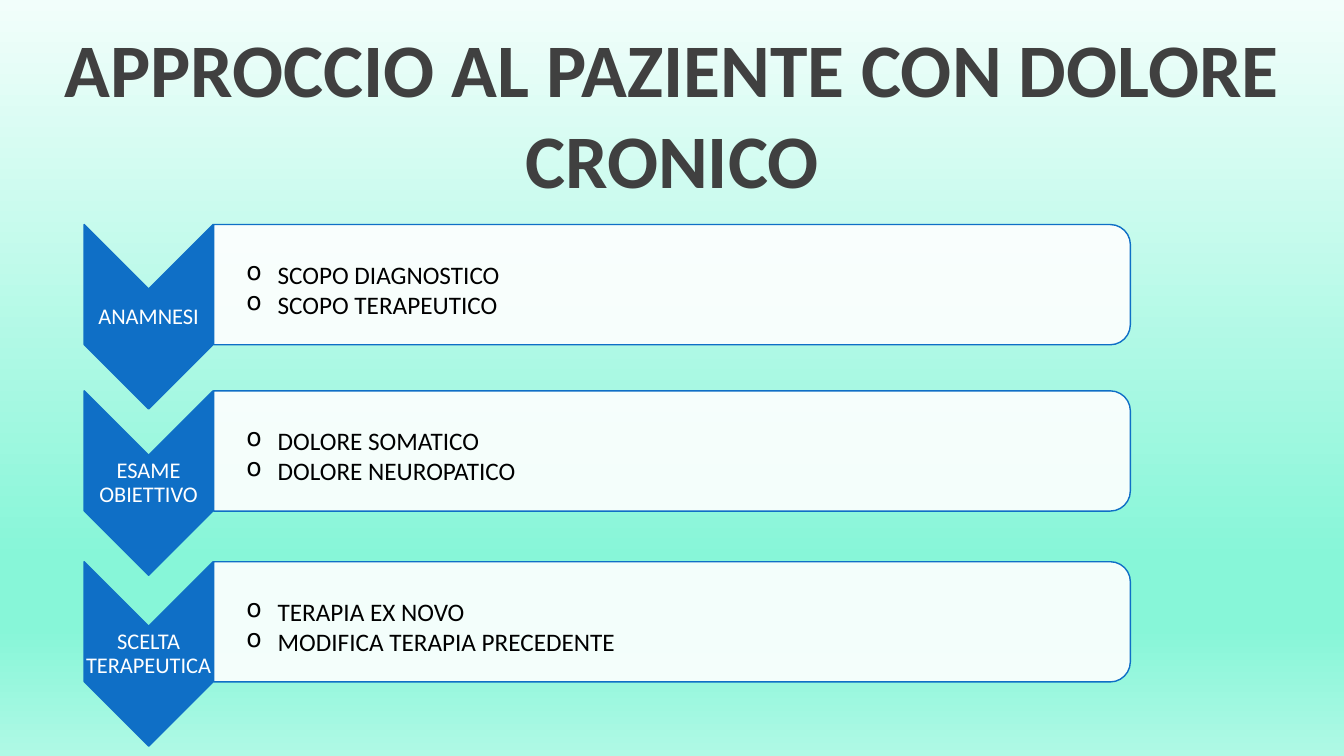
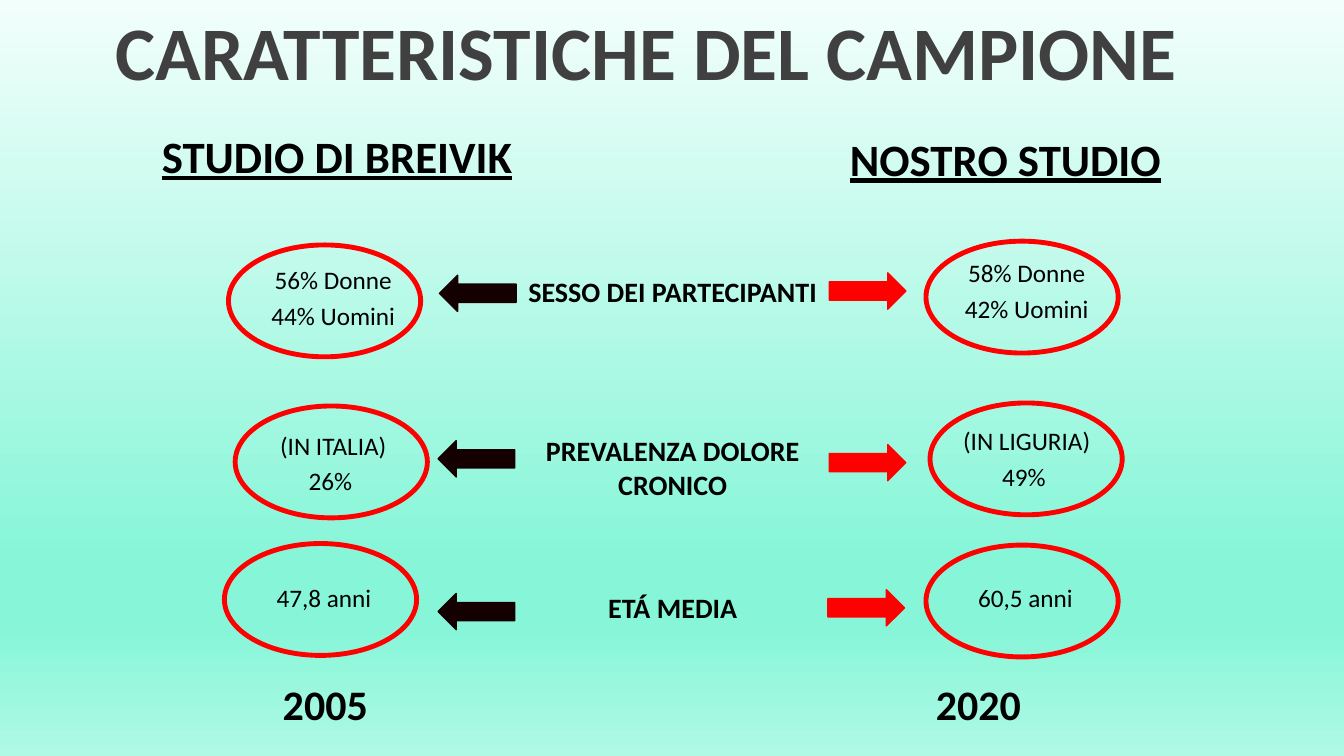
import pptx
import pptx.dml.color
import pptx.enum.shapes
import pptx.enum.text
import pptx.oxml
import pptx.oxml.ns
import pptx.util
import lxml.etree

RGBColor = pptx.dml.color.RGBColor
SHAPE = pptx.enum.shapes.MSO_SHAPE
ALIGN = pptx.enum.text.PP_ALIGN
qn = pptx.oxml.ns.qn

TITLE_GREY = RGBColor(0x40, 0x40, 0x40)
BLUE = RGBColor(0x0F, 0x6F, 0xC6)
RED = RGBColor(0xFF, 0x00, 0x00)
DARK = RGBColor(0x14, 0x00, 0x00)
BLACK = RGBColor(0x00, 0x00, 0x00)
WHITE = RGBColor(0xFF, 0xFF, 0xFF)
BACKGROUND_STOPS = [(0, "F2FEFB"), (74, "87F6D8"), (83, "87F6D8"), (100, "AFF9E5")]
FONT = "Calibri"
TITLE = {"size": 54, "color": TITLE_GREY, "bold": True, "align": ALIGN.CENTER}

deck = pptx.Presentation()
deck.slide_width = pptx.util.Inches(13.33)
deck.slide_height = pptx.util.Inches(7.5)
# All positions are percentages of the slide's width and height.
X = deck.slide_width / 100
Y = deck.slide_height / 100


def add_text(slide, lines, left, top, width, height, size,
             color=BLACK, bold=False, align=ALIGN.LEFT):
    """Add a text box with one paragraph per line and return its frame."""
    box = slide.shapes.add_textbox(round(left * X), round(top * Y),
                                   round(width * X), round(height * Y))
    frame = box.text_frame
    frame.word_wrap = True
    frame.text = "\n".join(lines)
    for para in frame.paragraphs:
        para.alignment = align
        para.font.name = FONT
        para.font.size = pptx.util.Pt(size)
        para.font.bold = bold
        para.font.color.rgb = color
    return frame


def add_shape(slide, kind, left, top, width, height, fill, line,
              line_width=1, turned=False):
    """Add a shape by its visible bounds; turned rotates it a quarter turn."""
    x, y, w, h = left * X, top * Y, width * X, height * Y
    if turned:
        x, y, w, h = x + (w - h) / 2, y + (h - w) / 2, h, w
    shape = slide.shapes.add_shape(kind, round(x), round(y), round(w), round(h))
    shape.rotation = 90 if turned else 0
    shape.shadow.inherit = False
    if fill is None:
        shape.fill.background()
    else:
        shape.fill.solid()
        shape.fill.fore_color.rgb = fill
    shape.line.color.rgb = line
    shape.line.width = pptx.util.Pt(line_width)
    return shape


# Shared background
background = deck.slide_master.background.fill
background.gradient()
background.gradient_angle = 270
stop_list = deck.slide_master.element.find(".//" + qn("a:gsLst"))
for stop in list(stop_list):
    stop_list.remove(stop)
for position, color in BACKGROUND_STOPS:
    stop = lxml.etree.SubElement(stop_list, qn("a:gs"), pos=str(position * 1000))
    lxml.etree.SubElement(stop, qn("a:srgbClr"), val=color)

blank = deck.slide_layouts[6]

# Slide 1: approach in three steps
slide = deck.slides.add_slide(blank)
add_text(slide, ["APPROCCIO AL PAZIENTE CON DOLORE CRONICO"],
         -3.2, 2.3, 106.4, 25.6, **TITLE)

STEPS = [
    (29.7, "ANAMNESI", ["SCOPO DIAGNOSTICO", "SCOPO TERAPEUTICO"]),
    (51.7, "ESAME OBIETTIVO", ["DOLORE SOMATICO", "DOLORE NEUROPATICO"]),
    (74.3, "SCELTA TERAPEUTICA", ["TERAPIA EX NOVO", "MODIFICA TERAPIA PRECEDENTE"]),
]
for top, step, points in STEPS:
    add_shape(slide, SHAPE.CHEVRON, 6.26, top, 9.6, 24.4, BLUE, BLUE, turned=True)
    label = add_text(slide, [step], 6.26, top + 8.6, 9.6, 7.3, 16, WHITE,
                     align=ALIGN.CENTER)
    label.vertical_anchor = pptx.enum.text.MSO_ANCHOR.MIDDLE
    label.margin_left = label.margin_right = pptx.util.Inches(0.01)
    label.margin_top = label.margin_bottom = pptx.util.Inches(0.01)
    label.paragraphs[0].line_spacing = 0.9

    band = add_shape(slide, SHAPE.ROUND_2_SAME_RECTANGLE, 15.9, top, 68.2, 15.9,
                     WHITE, BLUE, turned=True)
    fill_color = band.element.spPr.find(qn("a:solidFill")).find(qn("a:srgbClr"))
    lxml.etree.SubElement(fill_color, qn("a:alpha"), val="90000")

    bullets = add_text(slide, points, 17.6, top + 3.9, 44, 9.5, 18)
    indent = pptx.util.Inches(0.31)
    for para in bullets.paragraphs:
        properties = para._p.get_or_add_pPr()
        properties.set("marL", str(indent))
        properties.set("indent", str(-indent))
        bullet = pptx.oxml.parse_xml(
            '<a:buChar %s char="o"/>' % pptx.oxml.ns.nsdecls("a"))
        properties.find(qn("a:defRPr")).addprevious(bullet)

# Slide 2: the two samples compared
slide = deck.slides.add_slide(blank)
add_text(slide, ["CARATTERISTICHE DEL CAMPIONE"], 5.1, 0, 86, 13.5, **TITLE)

for heading, left, top in [("STUDIO DI BREIVIK", 11.3, 16.4),
                           ("NOSTRO STUDIO", 62.5, 16.7)]:
    frame = add_text(slide, [heading], left, top, 30, 8.5, 32, bold=True)
    frame.paragraphs[0].font.underline = True

for topic, top in [("SESSO DEI PARTECIPANTI", 35.7),
                   ("PREVALENZA DOLORE CRONICO", 56.7),
                   ("ETÁ MEDIA", 77.5)]:
    add_text(slide, [topic], 37.6, top, 24.9, 6, 20, bold=True, align=ALIGN.CENTER)

for left, top in [(32.7, 36.4), (32.6, 58.3), (32.6, 78.5)]:
    add_shape(slide, SHAPE.LEFT_ARROW, left, top, 5.7, 4.8, DARK, DARK)
for left, top in [(61.7, 36.1), (61.7, 58.8), (61.6, 78)]:
    add_shape(slide, SHAPE.RIGHT_ARROW, left, top, 5.7, 4.8, RED, RED)

# Each finding: lines, text corner, ellipse corner
FINDINGS = [
    (["56% Donne", "44% Uomini"], (15.8, 34.8), (17, 32.4)),
    (["(IN ITALIA)", "26% "], (15.8, 56.7), (17.5, 53.7)),
    (["47,8 anni"], (15.1, 76.8), (16.7, 71.9)),
    (["58% Donne", "42% Uomini"], (67.4, 33.9), (68.9, 31.9)),
    (["(IN LIGURIA)", "49% "], (67.4, 56.1), (69.2, 53.3)),
    (["60,5 anni"], (67.3, 76.8), (68.9, 72.1)),
]
for lines, text_corner, ellipse_corner in FINDINGS:
    frame = add_text(slide, lines, *text_corner, 18, 11, 18, align=ALIGN.CENTER)
    for para in frame.paragraphs:
        para.line_spacing = 0.9
        para.space_after = pptx.util.Pt(6)
    add_shape(slide, SHAPE.OVAL, *ellipse_corner, 14.3, 14.8, None, RED, 3.5)

for year, left in [("2005", 20.3), ("2020", 68.9)]:
    add_text(slide, [year], left, 89.1, 23, 8.1, 30, bold=True)

deck.save("out.pptx")
